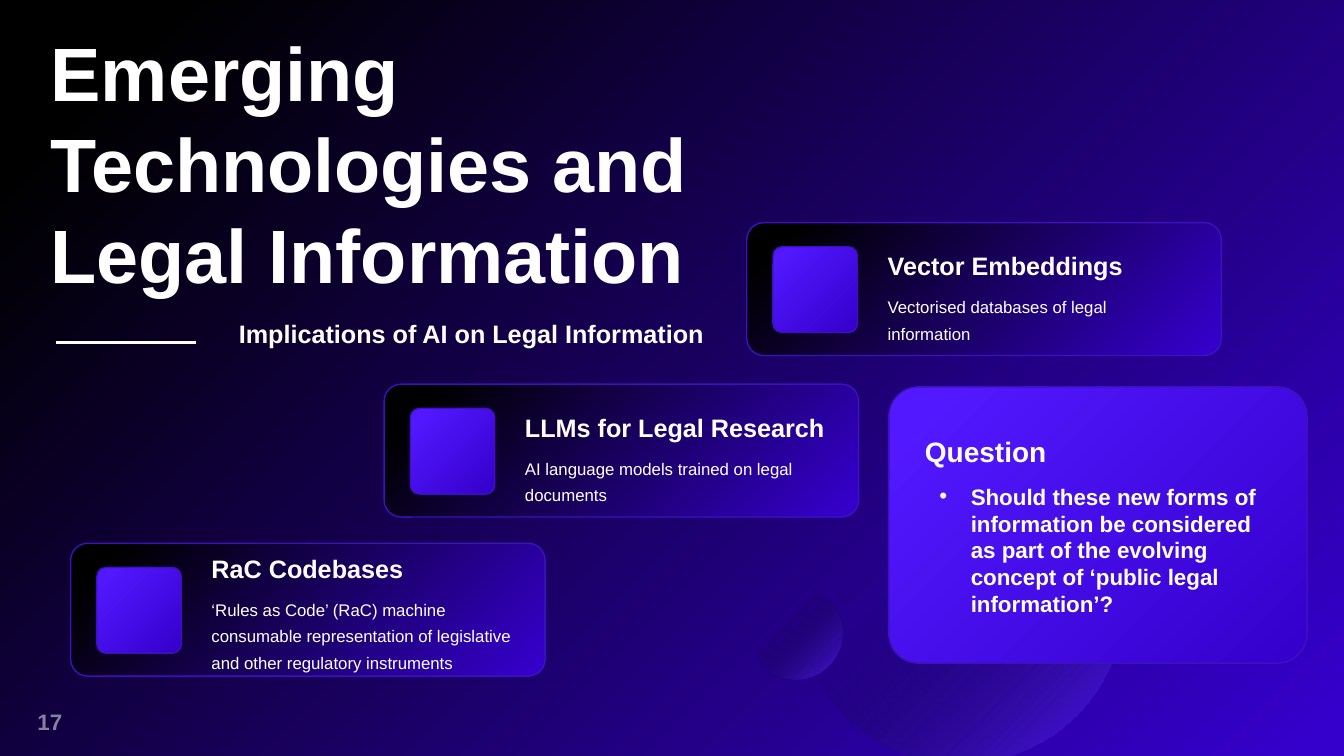
"""Build the slide on emerging technologies and legal information."""
from dataclasses import dataclass

from pptx import Presentation
from pptx.dml.color import RGBColor
from pptx.enum.shapes import MSO_CONNECTOR, MSO_SHAPE
from pptx.enum.text import MSO_ANCHOR, MSO_AUTO_SIZE, PP_ALIGN
from pptx.oxml import parse_xml
from pptx.oxml.ns import nsdecls, qn
from pptx.oxml.xmlchemy import OxmlElement
from pptx.util import Cm, Pt


@dataclass(frozen=True)
class Theme:
    font: str = "Arial"
    white: str = "FFFFFF"
    edge: str = "3D12BD"
    dark: tuple = ((2, "3500CC", 100), (91, "000000", 100), (100, "000000", 100))
    bright: tuple = ((2, "3500CC", 100), (91, "5218FF", 100), (100, "5218FF", 100))
    glow: tuple = ((0, "5218FF", 100), (63, "0B091E", 0))
    title: int = 54
    question: int = 20
    heading: int = 18
    point: int = 16
    detail: int = 12


theme = Theme()


def paint(fill, owner, stops):
    """Fill the owner with a circular gradient centred at the bottom right."""
    fill.solid()
    marks = "".join(
        f'<a:gs pos="{place * 1000}"><a:srgbClr val="{colour}">'
        f'<a:alpha val="{opacity * 1000}"/></a:srgbClr></a:gs>'
        for place, colour, opacity in stops
    )
    gradient = parse_xml(
        f'<a:gradFill {nsdecls("a")} rotWithShape="1"><a:gsLst>{marks}</a:gsLst>'
        '<a:path path="circle"><a:fillToRect l="100000" t="100000"/></a:path></a:gradFill>'
    )
    owner.replace(owner.find(qn("a:solidFill")), gradient)


def write(box, text, size, bold=True, wrap=True, spacing=None, align=PP_ALIGN.LEFT):
    """Put one formatted paragraph into the box and return it with its run."""
    frame = box.text_frame
    frame.word_wrap = wrap
    frame.auto_size = MSO_AUTO_SIZE.SHAPE_TO_FIT_TEXT
    frame.vertical_anchor = MSO_ANCHOR.TOP
    para = frame.paragraphs[0]
    para.alignment = align
    para.space_before = Pt(0)
    if spacing:
        para.line_spacing = spacing
    span = para.add_run()
    span.text = text
    span.font.name = theme.font
    span.font.size = Pt(size)
    span.font.bold = bold
    span.font.color.rgb = RGBColor.from_string(theme.white)
    return para, span


deck = Presentation()
deck.slide_width, deck.slide_height = Cm(33.87), Cm(19.05)
page = deck.slides.add_slide(deck.slide_layouts[1])
shapes = page.shapes
paint(page.background.fill, page.element.cSld.bg.bgPr, theme.dark)

number = shapes.add_textbox(Cm(0.48), Cm(17.7), Cm(1.55), Cm(0.94))
para, span = write(number, "17", theme.point, align=PP_ALIGN.CENTER)
number.text_frame.vertical_anchor = MSO_ANCHOR.MIDDLE
alpha = OxmlElement("a:alpha")
alpha.set("val", "50000")
span.font.fill._xPr.find(qn("a:solidFill"))[0].append(alpha)

for left, top, size in ((18.9, 14.78, 2.34), (20.07, 10.97, 8.26)):
    orb = shapes.add_shape(MSO_SHAPE.OVAL, Cm(left), Cm(top), Cm(size), Cm(size))
    orb.shadow.inherit = False
    orb.line.fill.background()
    paint(orb.fill, orb.element.spPr, theme.glow)

title = shapes.title
title.left, title.top, title.width, title.height = Cm(1.02), Cm(0.53), Cm(20.7), Cm(7.09)
write(title, "Emerging Technologies and Legal Information", theme.title)

subtitle = shapes.add_textbox(Cm(5.77), Cm(7.9), Cm(12.47), Cm(1.5))
write(subtitle, "Implications of AI on Legal Information", theme.heading)

rule = shapes.add_connector(MSO_CONNECTOR.STRAIGHT, Cm(1.4), Cm(8.64), Cm(4.95), Cm(8.64))
rule.line.color.rgb = RGBColor.from_string(theme.white)
rule.line.width = Pt(2)
rule.element.spPr.append(OxmlElement("a:effectLst"))

cards = (
    (1.78, 13.69, 0.13, "RaC Codebases", 5.38,
     "‘Rules as Code’ (RaC) machine consumable representation of legislative "
     "and other regulatory instruments", 8.66, 2.18),
    (9.68, 9.68, 0.58, "LLMs for Legal Research", 8.13,
     "AI language models trained on legal documents", 8.38, 1.52),
    (18.82, 5.61, 0.58, "Vector Embeddings", 6.5,
     "Vectorised databases of legal information", 7.92, 1.52),
)
panels = [(22.4, 9.75, 10.54, 6.96, 0.107, theme.bright)]
for left, top, *words in cards:
    panels.append((left, top, 11.96, 3.35, 0.129, theme.dark))
    panels.append((left + 0.66, top + 0.61, 2.13, 2.16, 0.107, theme.bright))

for left, top, width, height, corner, stops in panels:
    panel = shapes.add_shape(
        MSO_SHAPE.ROUNDED_RECTANGLE, Cm(left), Cm(top), Cm(width), Cm(height))
    panel.adjustments[0] = corner
    panel.shadow.inherit = False
    panel.line.color.rgb = RGBColor.from_string(theme.edge)
    panel.line.width = Pt(1)
    paint(panel.fill, panel.element.spPr, stops)

for left, top, inset, heading, heading_width, detail, width, height in cards:
    text_left, text_top = left + 3.3, top + inset
    label = shapes.add_textbox(Cm(text_left), Cm(text_top), Cm(heading_width), Cm(1.02))
    write(label, heading, theme.heading, wrap=False)
    note = shapes.add_textbox(Cm(text_left), Cm(text_top + 1.02), Cm(width), Cm(height))
    write(note, detail, theme.detail, bold=False, spacing=1.3)

question = shapes.add_textbox(Cm(23.06), Cm(10.82), Cm(8.97), Cm(1.12))
write(question, "Question", theme.question)

points = page.placeholders[1]
points.left, points.top, points.width, points.height = Cm(23.42), Cm(12.04), Cm(8.97), Cm(3.68)
para, span = write(
    points,
    "Should these new forms of information be considered as part of the evolving "
    "concept of ‘public legal information’?",
    theme.point,
)
layout = para._p.get_or_add_pPr()
layout.set("marL", str(Cm(0.79)))
layout.set("indent", str(-Cm(0.79)))
bullet = OxmlElement("a:buChar")
bullet.set("char", "•")
layout.append(bullet)
shapes.element.append(points.element)

deck.save("out.pptx")
